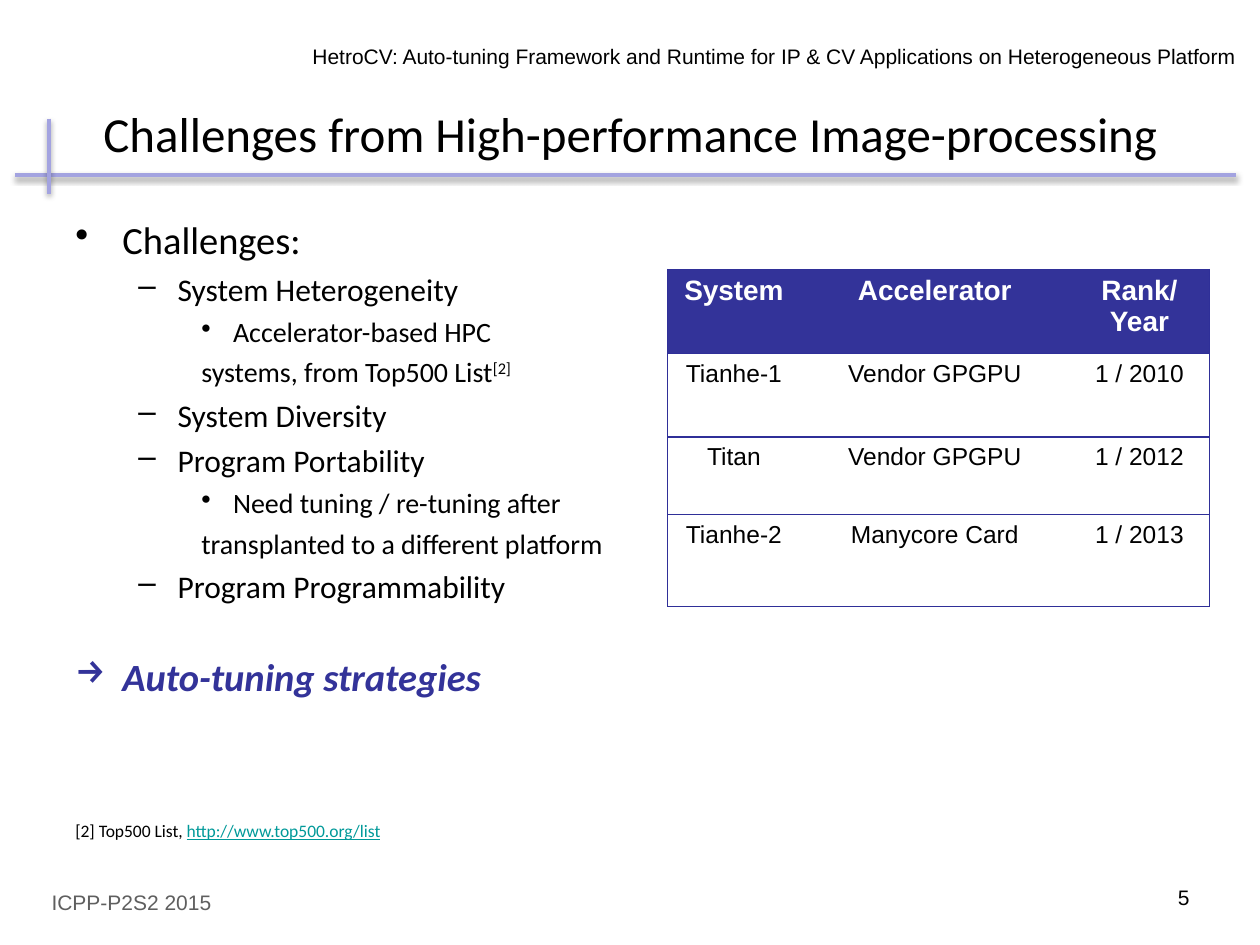
from lxml import etree
from pptx import Presentation
from pptx.dml.color import RGBColor
from pptx.enum.shapes import MSO_CONNECTOR
from pptx.enum.text import MSO_ANCHOR, PP_ALIGN
from pptx.oxml.ns import qn
from pptx.util import Cm, Pt

LEFT, CENTER, RIGHT = PP_ALIGN.LEFT, PP_ALIGN.CENTER, PP_ALIGN.RIGHT
MIDDLE = MSO_ANCHOR.MIDDLE
STRAIGHT = MSO_CONNECTOR.STRAIGHT
NAVY, BORDER, LILAC = "333399", "2F2F98", "A3A3E0"
BLACK, WHITE, GRAY, TEAL = "000000", "FFFFFF", "5F5F5F", "009999"

# name: size, left margin, first-line indent (cm), bullet, space before
LEVELS = {
    "main": (22, 0.95, -0.95, "•", 4.5),
    "sub": (18, 2.06, -0.79, "–", 4.3),
    "detail": (16, 3.18, -0.64, "•", 3.8),
    "detail_more": (16, 2.54, 0, None, 3.8),
    "result": (22, 0.95, -0.95, "→", 27.5),
    "reference": (10, 0, 0, None, 69),
}


def rgb(value):
    """Turn a hex string into a colour."""
    return RGBColor.from_string(value)


def sub(parent, tag, **attrs):
    """Append a DrawingML element to a parent."""
    el = etree.SubElement(parent, qn(tag))
    for key, value in attrs.items():
        el.set(key, str(value))
    return el


class Deck:
    """Holds the style and the current slide."""

    def __init__(self, prs, heading="Calibri", plain="Arial"):
        """Start a title-only slide."""
        self.heading, self.plain = heading, plain
        self.s = prs.slides.add_slide(prs.slide_layouts[5])

    def run(self, p, text, size, color=BLACK, font=None, bold=False,
            italic=False, underline=False, baseline=0):
        """Add one formatted run to a paragraph."""
        r = p.add_run()
        r.text = text
        f = r.font
        f.name, f.size = font or self.plain, Pt(size)
        f.bold, f.italic, f.underline = bold, italic, underline
        f.color.rgb = rgb(color)
        if baseline:
            r._r.get_or_add_rPr().set("baseline", str(baseline * 1000))

    def title(self, text, x, y, w, h):
        """Place and fill the title placeholder."""
        sp = self.s.shapes.title
        sp.left, sp.top, sp.width, sp.height = Cm(x), Cm(y), Cm(w), Cm(h)
        tf = sp.text_frame
        tf.vertical_anchor = MIDDLE
        tf.paragraphs[0].alignment = LEFT
        self.run(tf.paragraphs[0], text, 28, font=self.heading)

    def label(self, text, x, y, w, color=BLACK, align=LEFT, wrap=True):
        """Add a one-line header or footer text."""
        sp = self.s.shapes.add_textbox(Cm(x), Cm(y), Cm(w), Cm(0.76))
        tf = sp.text_frame
        tf.word_wrap = wrap
        tf.paragraphs[0].alignment = align
        self.run(tf.paragraphs[0], text, 12, color)

    def outline(self, items, x, y, w, h):
        """Add a bulleted outline of (level, runs) items."""
        tf = self.s.shapes.add_textbox(Cm(x), Cm(y), Cm(w), Cm(h)).text_frame
        tf.word_wrap = True
        for i, (level, runs) in enumerate(items):
            size, margin, indent, bullet, before = LEVELS[level]
            p = tf.add_paragraph() if i else tf.paragraphs[0]
            pPr = p._p.get_or_add_pPr()
            pPr.set("marL", str(Cm(margin)))
            pPr.set("indent", str(Cm(indent)))
            if bullet:
                sub(pPr, "a:buChar", char=bullet)
            else:
                sub(pPr, "a:buNone")
            if i:
                p.space_before = Pt(before)
            for text, style in runs:
                self.run(p, text, size, font=self.heading, **style)

    def table(self, rows, x, y, widths, heights):
        """Add a table with row rules and an outer frame."""
        tbl = self.s.shapes.add_table(
            len(rows), len(widths), Cm(x), Cm(y),
            Cm(sum(widths)), Cm(sum(heights))).table
        for col, w in zip(tbl.columns, widths):
            col.width = Cm(w)
        for i, (row, h) in enumerate(zip(rows, heights)):
            tbl.rows[i].height = Cm(h)
            for j, text in enumerate(row):
                cell = tbl.cell(i, j)
                self.borders(cell, j == 0, j == len(row) - 1)
                cell.fill.solid()
                cell.fill.fore_color.rgb = rgb(WHITE if i else NAVY)
                p = cell.text_frame.paragraphs[0]
                p.alignment = CENTER
                self.run(p, text, 14 if i else 16,
                         BLACK if i else WHITE, bold=i == 0)

    def borders(self, cell, first, last):
        """Draw the cell borders that are part of the frame or a rule."""
        tcPr = cell._tc.get_or_add_tcPr()
        for side, shown in (("L", first), ("R", last), ("T", True), ("B", True)):
            ln = sub(tcPr, f"a:ln{side}", w=Pt(0.75))
            if shown:
                sub(sub(ln, "a:solidFill"), "a:srgbClr", val=BORDER)
            else:
                sub(ln, "a:noFill")

    def rule(self, x1, y1, x2, y2):
        """Add a decorative line with a soft shadow."""
        cn = self.s.shapes.add_connector(
            STRAIGHT, Cm(x1), Cm(y1), Cm(x2), Cm(y2))
        cn.line.color.rgb = rgb(LILAC)
        cn.line.width = Pt(2)
        effects = sub(cn._element.spPr, "a:effectLst")
        shadow = sub(effects, "a:outerShdw", blurRad=Pt(3.1), dist=Pt(1.6),
                     dir=5400000, rotWithShape=0)
        sub(sub(shadow, "a:srgbClr", val=BLACK), "a:alpha", val=38000)


def main():
    """Build the slide."""
    prs = Presentation()
    prs.slide_width, prs.slide_height = Cm(25.4), Cm(19.05)
    d = Deck(prs)
    d.label("ICPP-P2S2 2015", 0.79, 17.81, 6.35, GRAY)
    d.label("HetroCV: Auto-tuning Framework and Runtime for IP & CV "
            "Applications on Heterogeneous Platform", 6.05, 0.76, 19.2, wrap=False)
    d.label("5", 18.11, 17.7, 6.12, align=RIGHT)
    d.title("Challenges from High-performance Image-processing",
            1.83, 1.55, 22.86, 2.24)
    d.outline([
        ("main", [("Challenges:", {})]),
        ("sub", [("System Heterogeneity", {})]),
        ("detail", [("Accelerator-based HPC", {})]),
        ("detail_more", [("systems, from Top500 List", {}),
                         ("[2]", {"baseline": 30})]),
        ("sub", [("System Diversity", {})]),
        ("sub", [("Program Portability", {})]),
        ("detail", [("Need tuning / re-tuning after", {})]),
        ("detail_more", [("transplanted to a different platform", {})]),
        ("sub", [("Program Programmability", {})]),
        ("result", [("Auto-tuning strategies",
                     {"color": NAVY, "bold": True, "italic": True})]),
        ("reference", [("[2] Top500 List, ", {}),
                       ("http://www.top500.org/list",
                        {"color": TEAL, "underline": True})]),
    ], 1.27, 4.24, 22.86, 13.61)
    d.table([
        ("System", "Accelerator", "Rank/Year"),
        ("Tianhe-1", "Vendor GPGPU", "1 / 2010"),
        ("Titan", "Vendor GPGPU", "1 / 2012"),
        ("Tianhe-2", "Manycore Card", "1 / 2013"),
    ], 13.46, 5.43, (2.67, 5.43, 2.82), (1.7, 1.68, 1.57, 1.85))
    d.rule(0.3, 3.53, 24.92, 3.53)
    d.rule(0.99, 2.39, 0.99, 3.91)
    prs.save("out.pptx")


if __name__ == "__main__":
    main()
